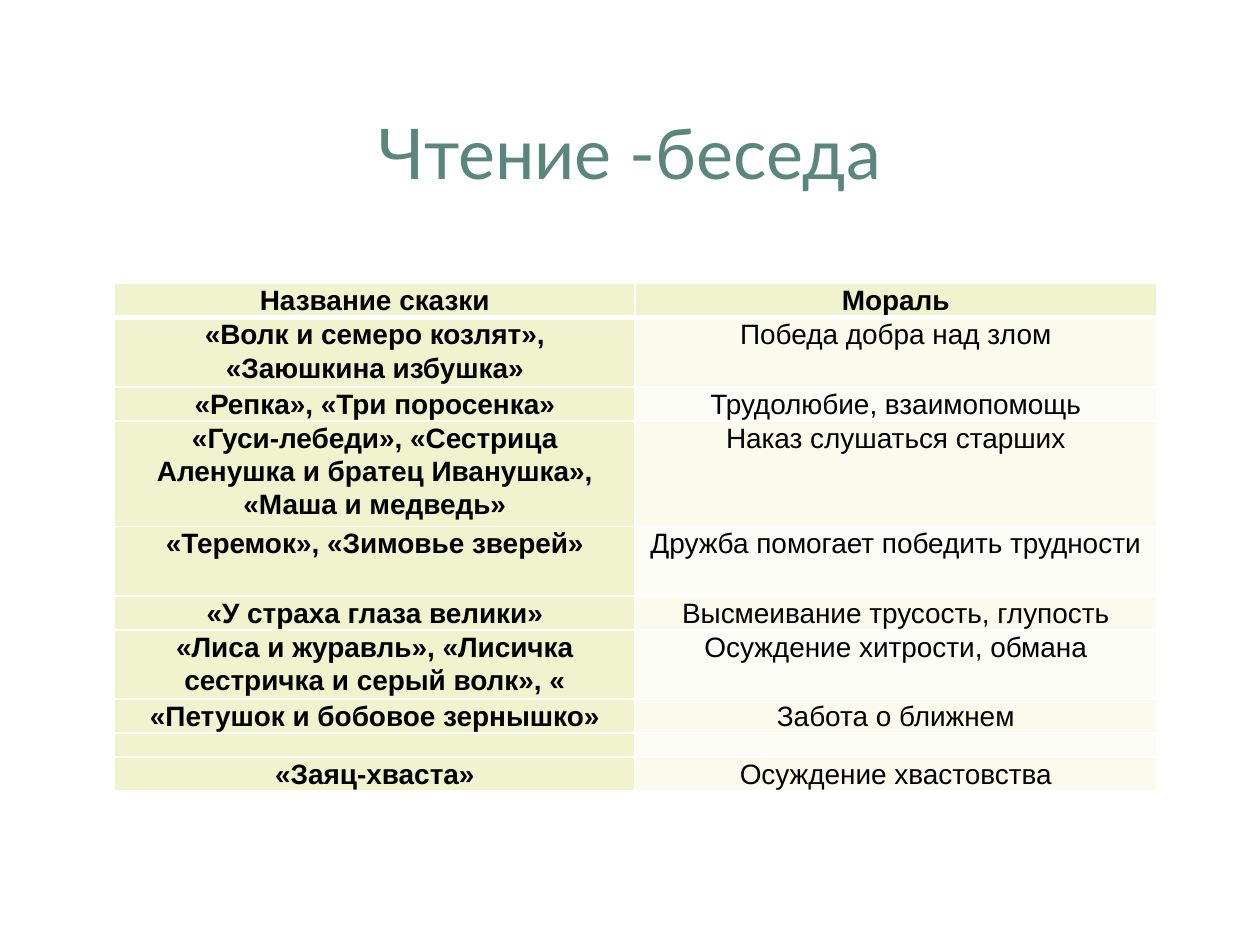
from pptx import Presentation
from pptx.util import Inches, Pt
from pptx.dml.color import RGBColor as RGB
from pptx.enum.text import PP_ALIGN as AL, MSO_ANCHOR as ANC
from lxml.etree import SubElement as Sub
from pptx.oxml.ns import qn

COLS = {"title": "5A867B", "text": "000000", "line": "FFFFFF",
        "head": "F1F3CF", "odd": "FAFAED", "even": "FCFDF6"}

ROWS = [
    (0.27, "Название сказки", "Мораль"),
    (0.55, "«Волк и семеро козлят», «Заюшкина избушка»", "Победа добра над злом"),
    (0.27, "«Репка», «Три поросенка»", "Трудолюбие, взаимопомощь"),
    (0.84, "«Гуси-лебеди», «Сестрица Аленушка и братец Иванушка», «Маша и медведь»",
     "Наказ слушаться старших"),
    (0.55, "«Теремок», «Зимовье зверей»", "Дружба помогает победить трудности"),
    (0.27, "«У страха глаза велики»", "Высмеивание трусость, глупость"),
    (0.55, "«Лиса и журавль», «Лисичка сестричка и серый волк», «",
     "Осуждение хитрости, обмана"),
    (0.27, "«Петушок и бобовое зернышко»", "Забота о ближнем"),
    (0.19, "", ""),
    (0.27, "«Заяц-хваста»", "Осуждение хвастовства"),
]


def style(font, size, name, color, bold=False):
    vals = {"size": Pt(size), "name": name, "bold": bold}
    for key, val in vals.items():
        setattr(font, key, val)
    font.color.rgb = RGB.from_string(COLS[color])


def edge(cell, side, width):
    line = Sub(cell._tc.get_or_add_tcPr(), qn("a:ln" + side), w=str(Pt(width)))
    fill = Sub(line, qn("a:solidFill"))
    Sub(fill, qn("a:srgbClr"), val=COLS["line"])


prs = Presentation()
prs.slide_width, prs.slide_height = Inches(10), Inches(7.5)
slide = prs.slides.add_slide(prs.slide_layouts[5])

title = slide.shapes.title
title.left, title.top = Inches(0.5), Inches(0.58)
title.width, title.height = Inches(9), Inches(1.25)
frame = title.text_frame
frame.text = "Чтение -беседа"
frame.vertical_anchor = ANC.MIDDLE
para = frame.paragraphs[0]
para.alignment = AL.CENTER
style(para.runs[0].font, 40, "Lato", "title")

table = slide.shapes.add_table(len(ROWS), 2, Inches(0.91), Inches(2.25),
                               Inches(8.27), Inches(4.03)).table
for col, width in zip(table.columns, (4.13, 4.14)):
    col.width = Inches(width)

for i, (high, *texts) in enumerate(ROWS):
    table.rows[i].height = Inches(high)
    for j, text in enumerate(texts):
        cell = table.cell(i, j)
        cell.margin_left = cell.margin_right = Inches(0.08)
        cell.margin_top = cell.margin_bottom = 0
        for side, width in {"L": 1, "R": 1, "T": 3 if i == 1 else 1,
                            "B": 3 if i == 0 else 1}.items():
            edge(cell, side, width)
        main = i == 0 or j == 0
        shade = "head" if main else "odd" if i % 2 else "even"
        cell.fill.solid()
        cell.fill.fore_color.rgb = RGB.from_string(COLS[shade])
        para = cell.text_frame.paragraphs[0]
        if not text:
            Sub(para._p, qn("a:endParaRPr"), sz="1000")
            continue
        for key, val in {"alignment": AL.CENTER, "line_spacing": 1.07,
                         "space_after": Pt(8)}.items():
            setattr(para, key, val)
        run = para.add_run()
        run.text = text
        style(run.font, 16, "Arial", "text", main)

prs.save("out.pptx")
